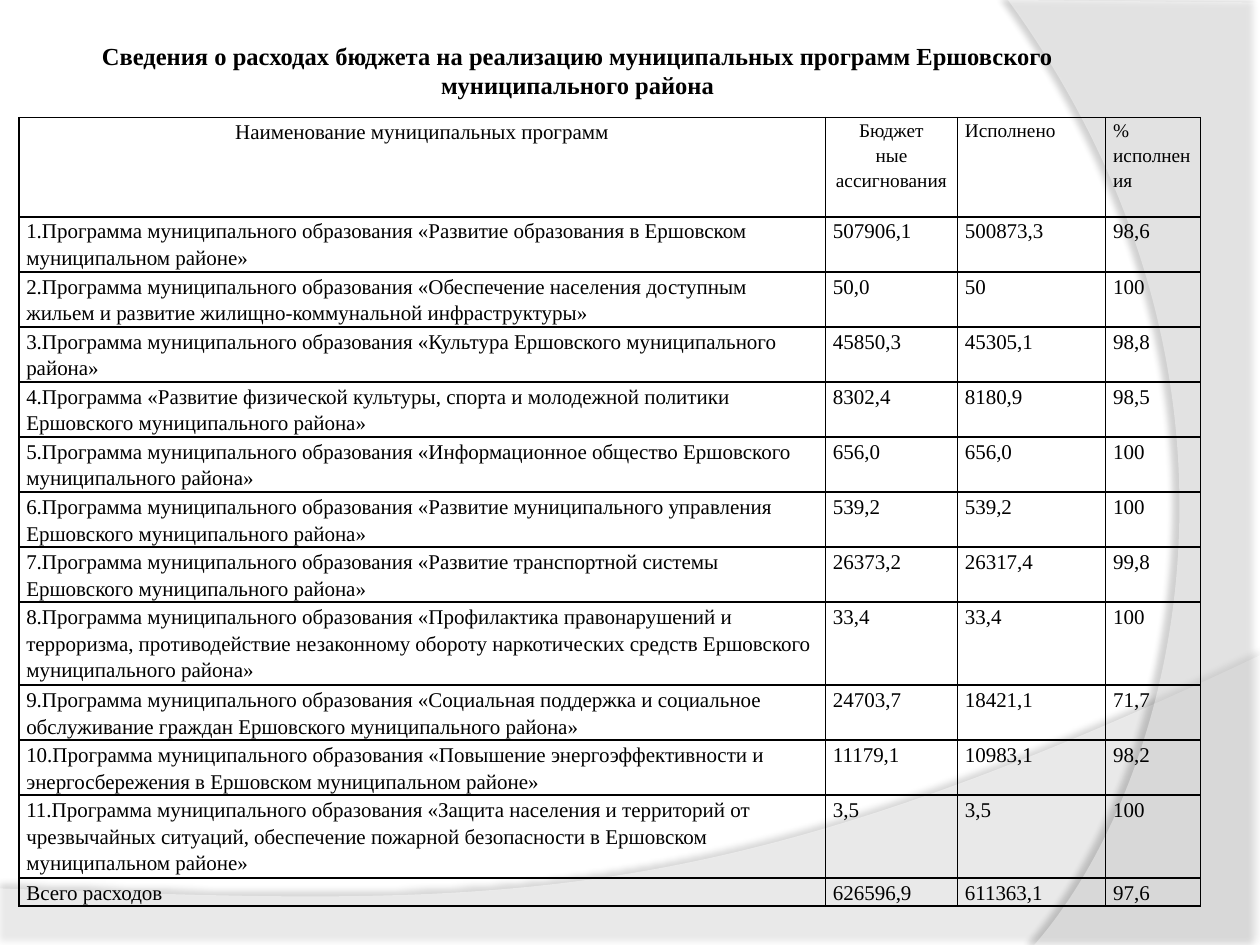
import lxml.etree
import pptx
import pptx.dml.color
import pptx.enum.text
import pptx.oxml
import pptx.oxml.ns
import pptx.util

Cm = pptx.util.Cm
Pt = pptx.util.Pt
RGB = pptx.dml.color.RGBColor
ALIGN = pptx.enum.text.PP_ALIGN
qn = pptx.oxml.ns.qn

THEME = {
    "font": "Times New Roman",
    "ink": RGB(0, 0, 0),
    "wave": RGB(255, 255, 255),
    "border": "000000",
    "title": Pt(14),
    "body": Pt(12),
    "small": Pt(11),
}


def style_text(paragraph, size, bold, align, spacing):
    for name, value in {"alignment": align, "line_spacing": spacing}.items():
        setattr(paragraph, name, value)
    for run in paragraph.runs:
        for name, value in {"name": THEME["font"], "size": size, "bold": bold}.items():
            setattr(run.font, name, value)
        run.font.color.rgb = THEME["ink"]


presentation = pptx.Presentation()
presentation.slide_width = Cm(25.4)
presentation.slide_height = Cm(19.05)
slide = presentation.slides.add_slide(presentation.slide_layouts[5])

# Translucent background waves: outline, fill opacity, shadow opacity, distance, direction
# The last three points of an outline are the controls and end of its curve
waves = [
    ([(0, 17.91), (0, 19.08), (25.4, 19.08), (25.4, 13.21),
      (14.2, 18.52), (9.93, 18.26), (0, 17.91)], 45, 35, Pt(3.5), 270),
    ([(25.4, 0.05), (25.4, 19.05), (20.85, 19.05),
      (23.75, 15.72), (25.86, 7.62), (20.32, 0)], 40, 45, Pt(4), 180),
]
for outline, opacity, shadow_opacity, distance, direction in waves:
    points = [(Cm(x), Cm(y)) for x, y in outline]
    builder = slide.shapes.build_freeform(*points[0])
    builder.add_line_segments(points[1:], close=False)
    wave = builder.convert_to_shape()
    wave.width = Cm(25.4) - wave.left
    wave.fill.solid()
    wave.fill.fore_color.rgb = THEME["wave"]
    wave.line.fill.background()
    properties = wave.element.spPr

    contour = next(properties.iter(qn("a:path")))
    contour.set("w", str(wave.width))
    bend_segments = contour.findall(qn("a:lnTo"))[-3:]
    bend = lxml.etree.SubElement(contour, qn("a:cubicBezTo"))
    for segment in bend_segments:
        bend.append(segment[0])
        contour.remove(segment)
    lxml.etree.SubElement(contour, qn("a:close"))

    fill_color = properties.find(qn("a:solidFill"))[0]
    lxml.etree.SubElement(fill_color, qn("a:alpha"), val=str(opacity * 1000))
    properties.append(pptx.oxml.parse_xml(
        f'<a:effectLst {pptx.oxml.ns.nsdecls("a")}><a:outerShdw blurRad="{Pt(4)}" '
        f'dist="{distance}" dir="{direction * 60000}" algn="ctr" rotWithShape="0">'
        f'<a:srgbClr val="000000"><a:alpha val="{shadow_opacity * 1000}"/></a:srgbClr>'
        '</a:outerShdw></a:effectLst>'))

# Title, brought in front of the waves
heading = slide.shapes.title
heading.element.getparent().append(heading.element)
for name, value in {"left": Cm(1.27), "top": Cm(0.76),
                    "width": Cm(20.75), "height": Cm(1.83)}.items():
    setattr(heading, name, value)
heading_frame = heading.text_frame
heading_frame.text = ("Сведения о расходах бюджета на реализацию муниципальных программ "
                      "Ершовского муниципального района")
for name, value in {"margin_left": Cm(0.13), "margin_right": Cm(0.13),
                    "margin_top": Cm(0.13), "margin_bottom": Cm(0.65), "word_wrap": True,
                    "auto_size": pptx.enum.text.MSO_AUTO_SIZE.NONE,
                    "vertical_anchor": pptx.enum.text.MSO_ANCHOR.MIDDLE}.items():
    setattr(heading_frame, name, value)
style_text(heading_frame.paragraphs[0], THEME["title"], True, ALIGN.CENTER, 1.0)

# Programme spending
MUNICIPAL = "Программа муниципального образования "
spending = [
    ("Наименование муниципальных программ", "Бюджет\nные ассигнования",
     "Исполнено", "% исполнения"),
    (f"1.{MUNICIPAL}«Развитие образования в Ершовском муниципальном районе»",
     "507906,1", "500873,3", "98,6"),
    (f"2.{MUNICIPAL}«Обеспечение населения доступным жильем и развитие "
     "жилищно-коммунальной инфраструктуры»", "50,0", "50", "100"),
    (f"3.{MUNICIPAL}«Культура Ершовского муниципального района»",
     "45850,3", "45305,1", "98,8"),
    ("4.Программа «Развитие физической культуры, спорта и молодежной политики "
     "Ершовского муниципального района»", "8302,4", "8180,9", "98,5"),
    (f"5.{MUNICIPAL}«Информационное общество Ершовского муниципального района»",
     "656,0", "656,0", "100"),
    (f"6.{MUNICIPAL}«Развитие муниципального управления Ершовского муниципального района»",
     "539,2", "539,2", "100"),
    (f"7.{MUNICIPAL}«Развитие транспортной системы Ершовского муниципального района»",
     "26373,2", "26317,4", "99,8"),
    (f"8.{MUNICIPAL}«Профилактика правонарушений и терроризма, противодействие "
     "незаконному обороту наркотических средств Ершовского муниципального района»",
     "33,4", "33,4", "100"),
    (f"9.{MUNICIPAL}«Социальная поддержка и социальное обслуживание граждан "
     "Ершовского муниципального района»", "24703,7", "18421,1", "71,7"),
    (f"10.{MUNICIPAL}«Повышение энергоэффективности и энергосбережения в Ершовском "
     "муниципальном районе»", "11179,1", "10983,1", "98,2"),
    (f"11.{MUNICIPAL}«Защита населения и территорий от чрезвычайных ситуаций, обеспечение "
     "пожарной безопасности в Ершовском муниципальном районе»", "3,5", "3,5", "100"),
    ("Всего расходов", "626596,9", "611363,1", "97,6"),
]
column_widths = [16.26, 2.66, 2.99, 1.91]
line_counts = [2] * 7 + [3, 2, 2, 3, 1]
row_heights = [2.0] + [round(count * 0.555, 2) for count in line_counts]

programmes = slide.shapes.add_table(
    len(spending), len(column_widths), Cm(0.38), Cm(2.37),
    Cm(sum(column_widths)), Cm(sum(row_heights))).table
programmes.first_row = False
programmes.horz_banding = False
for column, width in zip(programmes.columns, column_widths):
    column.width = Cm(width)
for row, height in zip(programmes.rows, row_heights):
    row.height = Cm(height)

# Cell text, borders and clear fill
for row_index, entries in enumerate(spending):
    for column_index, entry in enumerate(entries):
        cell = programmes.cell(row_index, column_index)
        cell.text = entry
        for name, value in {"margin_left": Cm(0.15), "margin_right": Cm(0.15),
                            "margin_top": 0, "margin_bottom": 0}.items():
            setattr(cell, name, value)
        is_header = row_index == 0
        size = THEME["small"] if is_header and column_index > 0 else THEME["body"]
        align = ALIGN.CENTER if is_header and column_index < 2 else ALIGN.LEFT
        for paragraph in cell.text_frame.paragraphs:
            style_text(paragraph, size, False, align, 1.15)
        cell_properties = cell._tc.get_or_add_tcPr()
        for side in ("lnL", "lnR", "lnT", "lnB"):
            cell_properties.append(pptx.oxml.parse_xml(
                f'<a:{side} {pptx.oxml.ns.nsdecls("a")} w="{Pt(1)}"><a:solidFill>'
                f'<a:srgbClr val="{THEME["border"]}"/></a:solidFill></a:{side}>'))
        cell.fill.background()

presentation.save("out.pptx")
